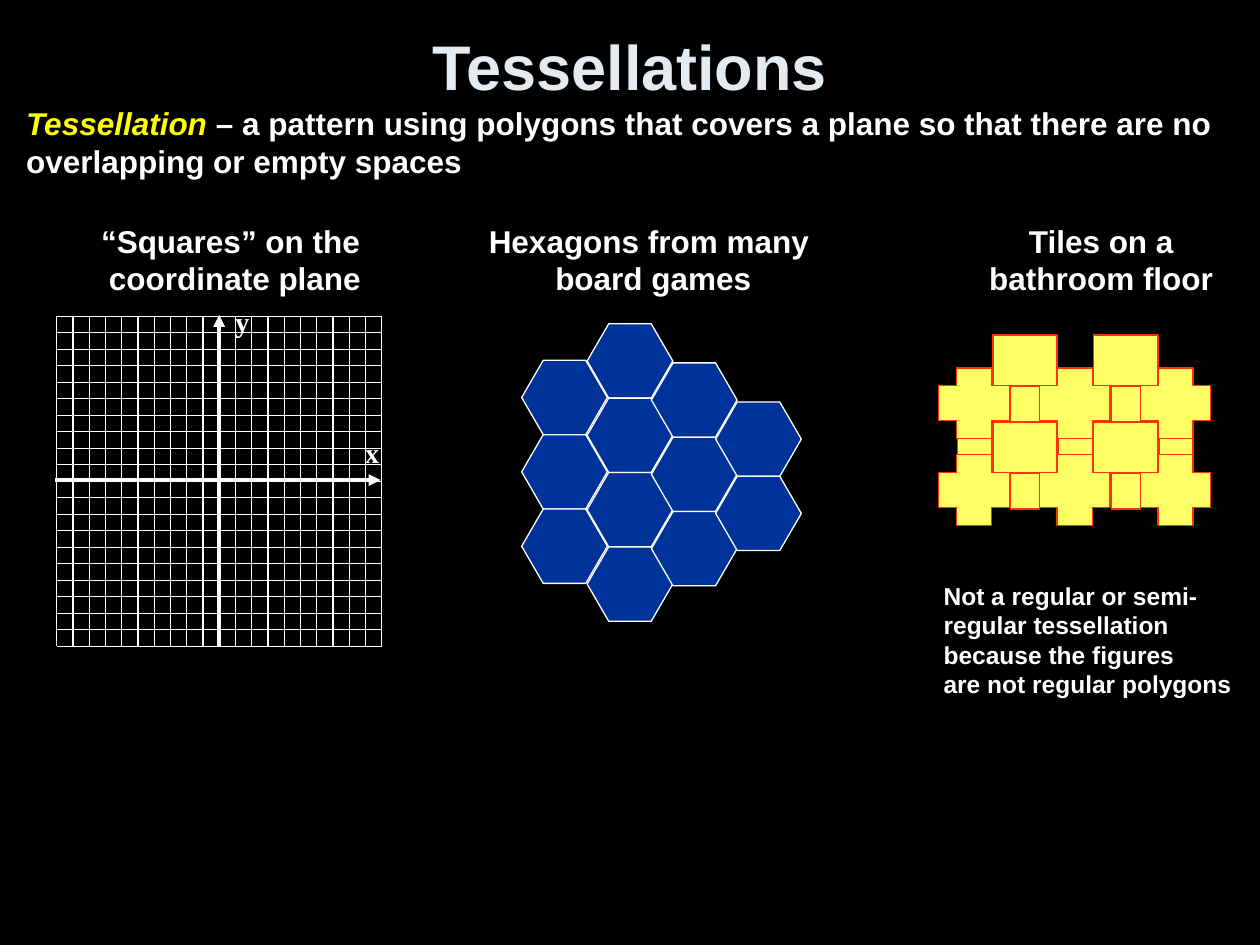
from lxml.etree import SubElement
from pptx import Presentation
from pptx.dml.color import RGBColor
from pptx.enum.shapes import MSO_CONNECTOR, MSO_SHAPE
from pptx.enum.text import MSO_ANCHOR, MSO_AUTO_SIZE, PP_ALIGN
from pptx.oxml.ns import qn
from pptx.util import Inches, Pt

WHITE, YELLOW, TITLE = "FFFFFF", "FFFF00", "E3EBF1"
BLUE, TILE, TILE_EDGE = "003399", "FFFF66", "FF3300"

DEFINITION = [
    ("Tessellation", YELLOW, True),
    (" – a pattern using polygons that covers a plane so that there are no "
     "overlapping or empty spaces", WHITE, False),
]
# text, box, wraps
HEADINGS = [
    ("“Squares” on the \ncoordinate plane", (0.7, 1.71, 2.33, 0.7), False),
    ("Hexagons from many \nboard games", (3.78, 1.71, 2.81, 0.7), False),
    ("Tiles on a bathroom floor", (7.67, 1.71, 2.14, 0.7), True),
]
NOTE = ("Not a regular or semi-regular tessellation because the figures\n"
        "are not regular polygons")

PLANE_LEFT, PLANE_TOP, PLANE_RIGHT, PLANE_BOTTOM = 0.45, 2.51, 3.03, 5.13
PLANE_CELLS = 20
AXES = [((1.74, 5.13), (1.74, 2.5)), ((0.44, 3.81), (3.02, 3.81))]
AXIS_LABELS = [("y", (1.77, 2.37, 0.31, 0.37)), ("x", (2.8, 3.41, 0.31, 0.37))]

HEX_W, HEX_H = 0.68, 0.59
HEX_COLUMNS = [(4.14, 2.86, 3), (4.66, 2.57, 4), (5.17, 2.88, 3), (5.68, 3.19, 2)]

TILE_DX, TILE_DY = 0.8, 0.69
# shape, first left and top, width and height, columns, rows
TILES = [
    (MSO_SHAPE.CROSS, (7.45, 2.92), (0.56, 0.56), 3, 2),
    (MSO_SHAPE.RECTANGLE, (7.88, 2.66), (0.51, 0.4), 2, 2),
    (MSO_SHAPE.RECTANGLE, (8.02, 3.07), (0.23, 0.28), 2, 2),
    (MSO_SHAPE.RECTANGLE, (7.6, 3.48), (0.27, 0.13), 3, 1),
]


def rgb(color):
    return RGBColor.from_string(color)


def add_text(shapes, box, runs, size, align=PP_ALIGN.LEFT, font="Arial",
             wrap=True, grow=True, anchor=MSO_ANCHOR.TOP):
    """Add a bold text box; each run is (text, colour, italic)."""
    tf = shapes.add_textbox(*map(Inches, box)).text_frame
    tf.word_wrap = wrap
    tf.auto_size = MSO_AUTO_SIZE.SHAPE_TO_FIT_TEXT if grow else MSO_AUTO_SIZE.NONE
    tf.vertical_anchor = anchor
    p = tf.paragraphs[0]
    p.alignment = align
    for text, color, italic in runs:
        for i, line in enumerate(text.split("\n")):
            if i:
                p.add_line_break()
            r = p.add_run()
            r.text = line
            r.font.name, r.font.size = font, Pt(size)
            r.font.bold, r.font.italic = True, italic
            r.font.color.rgb = rgb(color)


def add_line(shapes, start, end, width=0.75, arrow=False):
    s = shapes.add_connector(MSO_CONNECTOR.STRAIGHT, *map(Inches, start + end))
    s.line.color.rgb = rgb(WHITE)
    s.line.width = Pt(width)
    if arrow:
        SubElement(s.line._get_or_add_ln(), qn("a:tailEnd"), type="triangle")
    SubElement(s._element.spPr, qn("a:effectLst"))


def add_polygon(shapes, kind, box, fill, edge):
    s = shapes.add_shape(kind, *map(Inches, box))
    s.shadow.inherit = False
    s.fill.solid()
    s.fill.fore_color.rgb = rgb(fill)
    s.line.color.rgb = rgb(edge)
    s.line.width = Pt(0.75)
    return s


def add_coordinate_plane(shapes):
    dx = (PLANE_RIGHT - PLANE_LEFT) / PLANE_CELLS
    dy = (PLANE_BOTTOM - PLANE_TOP) / PLANE_CELLS
    for i in range(PLANE_CELLS + 1):
        x, y = PLANE_LEFT + i * dx, PLANE_TOP + i * dy
        add_line(shapes, (PLANE_LEFT, y), (PLANE_RIGHT, y))
        add_line(shapes, (x, PLANE_TOP), (x, PLANE_BOTTOM))
    for start, end in AXES:
        add_line(shapes, start, end, 2.25, arrow=True)
    for label, box in AXIS_LABELS:
        add_text(shapes, box, [(label, WHITE, False)], 16,
                 font="Times New Roman", wrap=False)


def add_hexagons(shapes):
    for x, top, count in HEX_COLUMNS:
        for i in range(count):
            s = add_polygon(shapes, MSO_SHAPE.HEXAGON,
                            (x, top + i * HEX_H, HEX_W, HEX_H), BLUE, WHITE)
            s.adjustments[0] = 0.29


def add_tiles(shapes):
    for kind, (left, top), size, columns, rows in TILES:
        for row in range(rows):
            for col in range(columns):
                place = (left + col * TILE_DX, top + row * TILE_DY)
                add_polygon(shapes, kind, place + size, TILE, TILE_EDGE)


def main():
    prs = Presentation()
    prs.slide_width, prs.slide_height = Inches(10), Inches(7.5)
    slide = prs.slides.add_slide(prs.slide_layouts[6])
    slide.background.fill.solid()
    slide.background.fill.fore_color.rgb = rgb("000000")
    shapes = slide.shapes

    add_text(shapes, (0.5, 0.17, 9, 0.7), [("Tessellations", TITLE, False)], 36,
             PP_ALIGN.CENTER, grow=False, anchor=MSO_ANCHOR.MIDDLE)
    add_text(shapes, (0.11, 0.78, 9.76, 0.7), DEFINITION, 18)
    add_coordinate_plane(shapes.add_group_shape().shapes)
    for text, box, wrap in HEADINGS:
        add_text(shapes, box, [(text, WHITE, False)], 18, PP_ALIGN.CENTER, wrap=wrap)
    add_hexagons(shapes.add_group_shape().shapes)
    add_tiles(shapes)
    add_text(shapes, (7.39, 4.56, 2.61, 1.03), [(NOTE, WHITE, False)], 14)
    prs.save("out.pptx")


if __name__ == "__main__":
    main()
